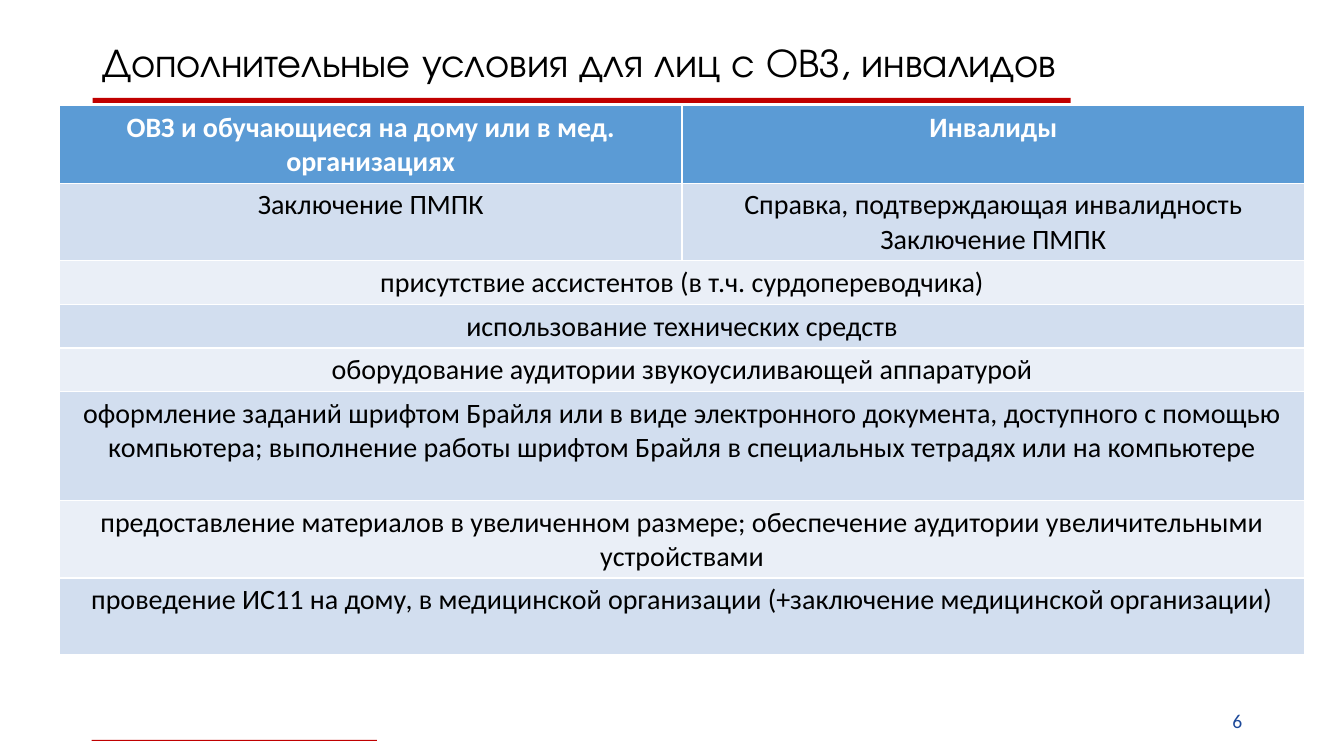
from pptx import Presentation
from pptx.dml.color import RGBColor as Rgb
from pptx.enum.shapes import MSO_SHAPE as Shape
from pptx.enum.text import MSO_ANCHOR as Anchor, PP_ALIGN as Align
from pptx.util import Inches, Pt

COLORS = {
    "red": "C00000", "blue": "1D4999", "head": "5B9BD5",
    "dark": "D2DEEF", "light": "EAEFF7", "white": "FFFFFF", "black": "000000",
}
ROWS = [
    (0.76, ["ОВЗ и обучающиеся на дому или в мед. организациях", "Инвалиды"]),
    (0.76, ["Заключение ПМПК",
            "Справка, подтверждающая инвалидность\nЗаключение ПМПК"]),
    (0.43, ["присутствие ассистентов (в т.ч. сурдопереводчика)"]),
    (0.43, ["использование технических средств"]),
    (0.43, ["оборудование аудитории звукоусиливающей аппаратурой"]),
    (1.08, ["оформление заданий шрифтом Брайля или в виде электронного "
            "документа, доступного с помощью компьютера; выполнение работы "
            "шрифтом Брайля в специальных тетрадях или на компьютере"]),
    (0.76, ["предоставление материалов в увеличенном размере; обеспечение "
            "аудитории увеличительными устройствами"]),
    (0.76, ["проведение ИС11 на дому, в медицинской организации "
            "(+заключение медицинской организации)"]),
]


def color(name):
    """Return the named colour."""
    return Rgb.from_string(COLORS[name])


def style(para, size, tint, face="Calibri", bold=False, align=Align.LEFT):
    """Set the font and alignment of a paragraph."""
    para.alignment = align
    font = para.font
    font.name, font.size, font.bold = face, Pt(size), bold
    font.color.rgb = color(tint)


def add_bar(slide, *box):
    """Add a thin red bar."""
    bar = slide.shapes.add_shape(Shape.RECTANGLE, *map(Inches, box))
    bar.shadow.inherit = False
    bar.fill.solid()
    bar.fill.fore_color.rgb = color("red")
    bar.line.fill.background()


def add_text(slide, box, text, *look, **more):
    """Add a one-paragraph text box and return its paragraph."""
    frame = slide.shapes.add_textbox(*map(Inches, box)).text_frame
    frame.word_wrap = True
    frame.vertical_anchor = Anchor.MIDDLE
    frame.text = text
    para = frame.paragraphs[0]
    style(para, *look, **more)
    return para


def fill_cell(cell, text, back, tint, bold):
    """Write and colour one table cell."""
    cell.fill.solid()
    cell.fill.fore_color.rgb = color(back)
    cell.text = text
    for para in cell.text_frame.paragraphs:
        style(para, 20, tint, bold=bold, align=Align.CENTER)


def add_grid(slide):
    """Add the table, merging rows that hold a single text."""
    high = sum(row[0] for row in ROWS)
    box = map(Inches, (0.59, 1.05, 12.35, high))
    grid = slide.shapes.add_table(len(ROWS), 2, *box).table
    for num, (high, texts) in enumerate(ROWS):
        grid.rows[num].height = Inches(high)
        if len(texts) == 1:
            grid.cell(num, 0).merge(grid.cell(num, 1))
        band = "dark" if num % 2 else "light"
        look = (band, "black", False) if num else ("head", "white", True)
        for col, text in enumerate(texts):
            fill_cell(grid.cell(num, col), text, *look)


def main():
    """Build and save the slide."""
    deck = Presentation()
    deck.slide_width, deck.slide_height = Inches(13.33), Inches(7.5)
    slide = deck.slides.add_slide(deck.slide_layouts[6])
    add_bar(slide, 0.92, 0.97, 9.7, 0.05)
    add_bar(slide, 0.91, 7.34, 2.83, 0.01)
    add_text(slide, (9.42, 6.95, 3, 0.4), "6", 14, "blue", align=Align.RIGHT)
    add_grid(slide)
    title = add_text(slide, (0.92, 0.24, 11.5, 0.79),
                     "Дополнительные условия для лиц с ОВЗ, инвалидов",
                     28.8, "black", face="TeX Gyre Adventor")
    title.line_spacing = 0.9
    deck.save("out.pptx")


if __name__ == "__main__":
    main()
